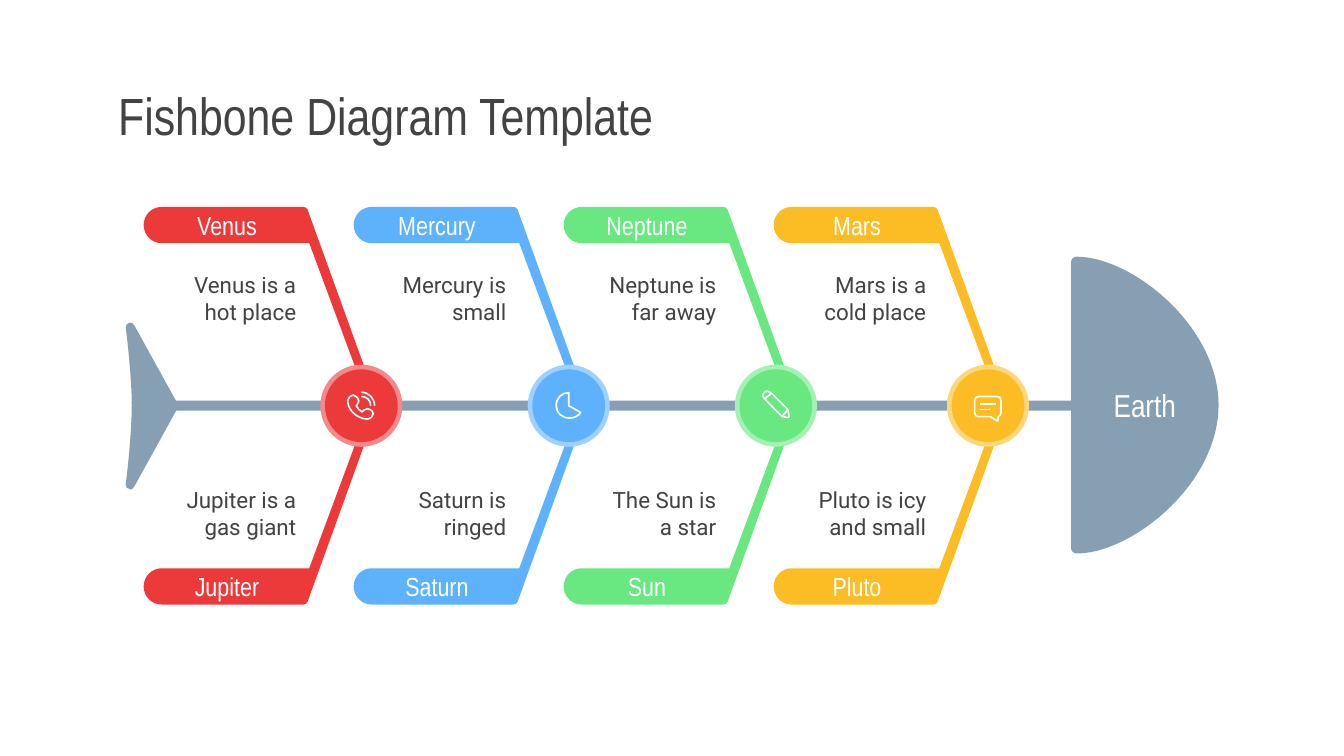
from lxml import etree
from pptx import Presentation
from pptx.dml.color import RGBColor
from pptx.enum import shapes, text
from pptx.oxml import ns
from pptx.util import Pt

SLATE, INK, WHITE = "869FB2", "434343", "FFFFFF"
HEAD, BODY = "Arial Narrow", "Roboto"
LEFT, CENTER, RIGHT = text.PP_ALIGN.LEFT, text.PP_ALIGN.CENTER, text.PP_ALIGN.RIGHT

# Paths: a pair is a line to that point, six numbers are a cubic curve.
RIB = [(85.7, 0), (9.6, 0), (4.3, 0, 0, 4.3, 0, 9.7), (0, 15, 4.3, 19.4, 9.6, 19.4),
       (88.7, 19.4), (114.6, 89.3), (114.6, 90.7, 115.3, 91.4, 116.6, 91.4),
       (119, 91.4, 119.5, 89.2, 119, 87.8), (87.8, 1.4), (87.3, 0.6, 86.6, 0, 85.7, 0)]
SKULL = [(3, 0), (1.3, 0, 0, 1.3, 0, 3), (0, 156), (0, 157.7, 1.3, 159, 3, 159),
         (32.4, 159, 79, 122, 79, 79.5), (79, 37, 32.4, 0, 3, 0)]
TAIL = [(2.6, 0), (1, 0, -0.1, 1.4, 0.1, 2.9), (0.4, 3.2, 3.4, 29, 3.4, 44.3),
        (3.4, 60, 0.4, 86, 0.1, 86.6), (-0.1, 88, 1, 89.4, 2.6, 89.4),
        (3.4, 89.4, 4.2, 88.9, 4.7, 88), (27.8, 46.2), (28.4, 45.2, 28.4, 44.2, 27.8, 43.2),
        (4.7, 1.4), (4.2, 0.5, 3.4, 0, 2.6, 0)]
PHONE = [
    [(0, -7.2), (4, -7.2, 7.1, -4, 7.1, 0)],
    [(0, -5), (2.9, -5, 5, -2.9, 5, 0)],
    [(2.9, 7.1), (3.6, 7.1, 4.5, 6.9, 5, 6.5), (5.7, 5.7), (6.6, 4.8, 6.6, 3.8, 5.8, 2.9),
     (5, 2.2), (4.2, 1.4, 2.5, 1.4, 1.5, 2.3), (0.4, 3.3), (-0.8, 2.6, -2.2, 1.4, -2.7, 0),
     (-1.9, -1.2), (-1.2, -2, -1.2, -3.5, -2, -4.2), (-2.9, -5), (-3.9, -6, -5, -6, -5.9, -5),
     (-6.5, -4.3), (-7.4, -3.4, -7.4, -2.6, -7.2, -1.5), (-6.5, 2.9, -2.2, 6.8, 2.9, 7.1)]]
CLOCK = [
    [(0.5, 6.6), (-3.7, 6.6, -6.7, 3.8, -6.7, 0), (-6.7, -4.2, -3.7, -7, 0, -7),
     (0, 0), (6.4, 3.6), (5.3, 5.4, 3, 6.6, 0.5, 6.6)]]
PENCIL = [
    [(3.3, 5.8), (6.4, 6.3), (7, 6.2), (7, 5.8), (6.5, 2.2), (-2.5, -6.8),
     (-4, -8.2, -5.5, -8, -6.4, -7.1), (-7.4, -6, -7.4, -5, -6.2, -3.8), (3.3, 5.8)],
    [(-6, -3.6), (-2.5, -6.8)],
    [(6.3, 2.3), (3.3, 5.6)]]
CHAT = [
    [(-5, 5.8), (1.3, 5.8), (4.9, 8), (5.4, 8), (5.4, 5.8), (6.4, 5.5, 7, 4.7, 7, 3.6),
     (7, -2.9), (7, -4.3, 6, -5, 4.9, -5), (-5, -5), (-6.3, -5, -7.2, -4.1, -7.2, -2.9),
     (-7.2, 3.6), (-7.2, 5, -6.3, 5.8, -5, 5.8)],
    [(-4.5, 2), (1.6, 2)],
    [(-4.5, -0.9), (4.1, -0.9)]]

# Node centre, colour, halo, icon, then label and note above and below.
BONES = [
    (193.6, "EC3A3B", "F48989", PHONE,
     [("Venus", "Venus is a hot place"), ("Jupiter", "Jupiter is a gas giant")]),
    (304.7, "5EB2FC", "9ED1FD", CLOCK,
     [("Mercury", "Mercury is small"), ("Saturn", "Saturn is ringed")]),
    (415.7, "69E781", "A5F1B3", PENCIL,
     [("Neptune", "Neptune is far away"), ("Sun", "The Sun is a star")]),
    (529.3, "FCBD24", "FDD77C", CHAT,
     [("Mars", "Mars is a cold place"), ("Pluto", "Pluto is icy and small")])]


def color(code):
    return RGBColor.from_string(code)


def paint(shape, fill):
    shape.shadow.inherit = False
    shape.fill.solid()
    shape.fill.fore_color.rgb = color(fill)
    shape.line.fill.background()
    return shape


def write(shape, words, size=14, font=HEAD, ink=WHITE, align=CENTER):
    frame = shape.text_frame
    frame.word_wrap = True
    frame.vertical_anchor = text.MSO_ANCHOR.MIDDLE
    frame.margin_left = frame.margin_right = Pt(7.2)
    frame.margin_top = frame.margin_bottom = Pt(7.2)
    par = frame.paragraphs[0]
    par.alignment = align
    run = par.add_run()
    run.text = words
    run.font.size, run.font.name = Pt(size), font
    run.font.color.rgb = color(ink)


def label(slide, x, y, w, h, words, **style):
    write(slide.shapes.add_textbox(Pt(x), Pt(y), Pt(w), Pt(h)), words, **style)


def outline(slide, x, y, steps, flip=1):
    """Build a path at x, y; flip -1 mirrors it upward."""
    pts = [(Pt(x + step[k]), Pt(y + flip * step[k + 1]))
           for step in steps for k in range(0, len(step), 2)]
    form = slide.shapes.build_freeform(*pts[0], scale=1.0)
    form.add_line_segments(pts[1:], close=steps[0] == steps[-1][-2:])
    shape = form.convert_to_shape()
    # Join each three segments that stand for a curve into one cubic.
    legs = iter(list(shape._element.iter(ns.qn("a:lnTo"))))
    for step in steps[1:]:
        leg = next(legs)
        if len(step) == 6:
            leg.tag = ns.qn("a:cubicBezTo")
            for more in (next(legs), next(legs)):
                leg.append(more[0])
                more.getparent().remove(more)
    return shape


def stroke(slide, x, y, steps):
    if len(steps) == 2 and len(steps[1]) == 2:
        (ax, ay), (bx, by) = steps
        line = slide.shapes.add_connector(shapes.MSO_CONNECTOR.STRAIGHT, Pt(x + ax),
                                          Pt(y + ay), Pt(x + bx), Pt(y + by))
        etree.SubElement(line._element.spPr, ns.qn("a:effectLst"))
    else:
        line = outline(slide, x, y, steps)
        line.shadow.inherit = False
        line.fill.background()
    line.line.color.rgb = color(WHITE)
    line.line.width = Pt(0.87)


def disc(slide, x, y, size, fill):
    paint(slide.shapes.add_shape(shapes.MSO_SHAPE.OVAL, Pt(x - size / 2), Pt(y - size / 2),
                                 Pt(size), Pt(size)), fill)


def fish(slide, x, y, w, h):
    """Draw spine, head and tail in the box."""
    mid = y + h / 2
    spine = slide.shapes.add_shape(shapes.MSO_SHAPE.ROUNDED_RECTANGLE,
                                   Pt(x + 12), Pt(mid - 2.4), Pt(w - 85), Pt(5.4))
    spine.adjustments[0] = 0.5
    paint(spine, SLATE)
    skull = paint(outline(slide, x + w - 79, y, SKULL), SLATE)
    write(skull, "Earth", size=17)
    paint(outline(slide, x, y + 35.3, TAIL), SLATE)


def bone(slide, x, y, h, hub, fill, halo, icon, ends):
    """Draw the upper and lower rib with their texts, and the node at hub."""
    tops = [(y, 1, y, y + 25.2), (y + h, -1, y + h - 19.4, y + h - 72.6)]
    for (edge, flip, tag, note), (name, fact) in zip(tops, ends):
        paint(outline(slide, x, edge, RIB, flip), fill)
        label(slide, x, tag, 89.3, 19.4, name)
        label(slide, x + 13.2, note, 75.6, 46.8, fact,
              size=12, font=BODY, ink=INK, align=RIGHT)
    mid = y + h / 2
    disc(slide, hub, mid, 44, halo)
    disc(slide, hub, mid, 39, fill)
    for steps in icon:
        stroke(slide, hub, mid, steps)


def main():
    deck = Presentation()
    deck.slide_width, deck.slide_height = Pt(720), Pt(405)
    slide = deck.slides.add_slide(deck.slide_layouts[6])
    label(slide, 56.2, 42.5, 608.4, 38.2, "Fishbone Diagram Template",
          size=28, ink=INK, align=LEFT)
    fish(slide, 67.2, 137.5, 585.6, 159)
    for i, parts in enumerate(BONES):
        bone(slide, 77 + 112.5 * i, 110.9, 213, *parts)
    deck.save("out.pptx")


if __name__ == "__main__":
    main()
